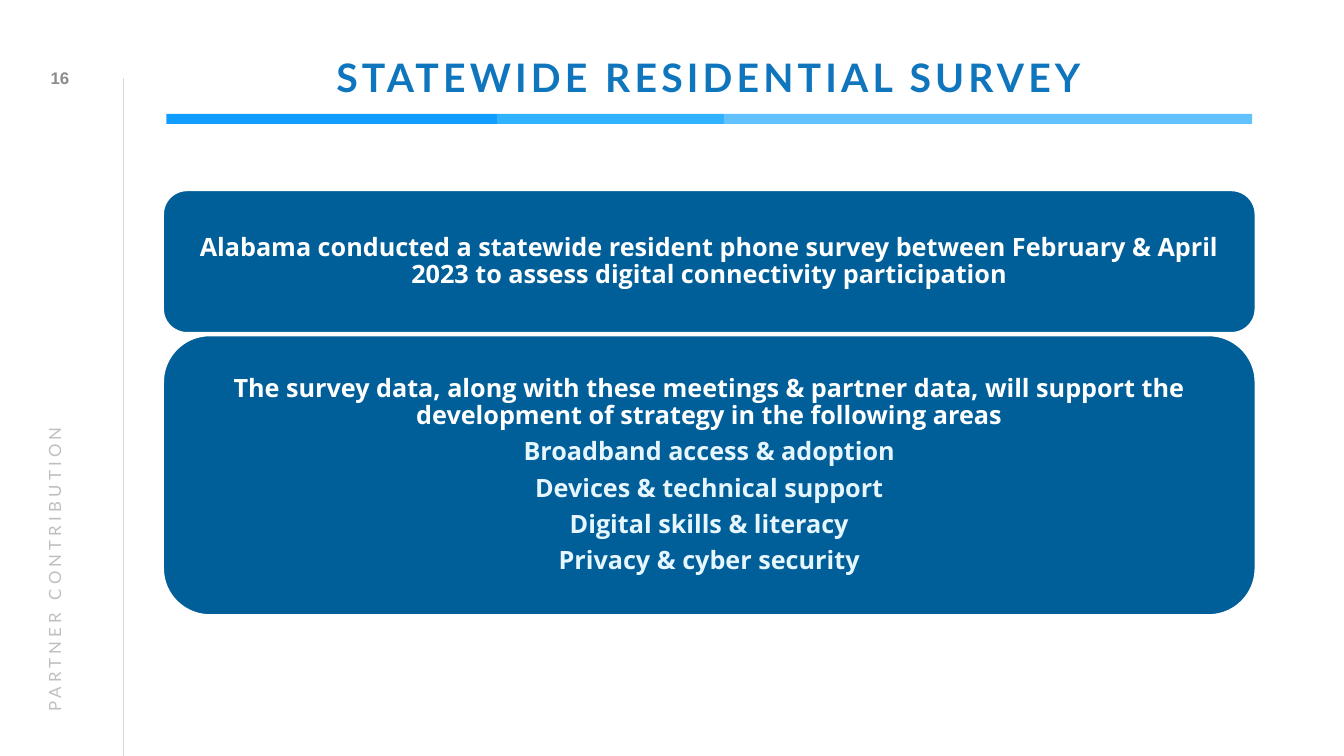
from pptx import Presentation, util as u
from pptx.dml.color import RGBColor
from pptx.enum import shapes, text
from pptx.oxml.ns import qn
from lxml import etree

PX = 9144  # 100 px to the inch

WHITE = RGBColor(0xFF, 0xFF, 0xFF)
NAVY = RGBColor(0x00, 0x5E, 0x98)
PALE_BLUE = RGBColor(0xE6, 0xF6, 0xFF)
TITLE_BLUE = RGBColor(0x0F, 0x75, 0xBC)
RULE_GRAY = RGBColor(0xD9, 0xD9, 0xD9)
NUMBER_GRAY = RGBColor(0x8C, 0x8C, 0x8C)
LABEL_GRAY = RGBColor(0xBF, 0xBF, 0xBF)
BAR_COLORS = (
    RGBColor(0x11, 0x9D, 0xFF),
    RGBColor(0x31, 0xB2, 0xFF),
    RGBColor(0x62, 0xC1, 0xFF),
)

SURVEY = ("Alabama conducted a statewide resident phone survey between "
          "February & April 2023 to assess digital connectivity participation")
STRATEGY = ("The survey data, along with these meetings & partner data, will "
            "support the development of strategy in the following areas")
AREAS = ("Broadband access & adoption", "Devices & technical support",
         "Digital skills & literacy", "Privacy & cyber security")


def px(*lengths):
    return [u.Emu(length * PX) for length in lengths]


def add_run(paragraph, words, font, size, color, bold=False, spacing=0):
    run = paragraph.add_run()
    run.text = words
    run.font.name = font
    run.font.size = u.Pt(size)
    run.font.bold = bold
    run.font.color.rgb = color
    if spacing:
        run.font._element.set("spc", str(spacing * 100))


def set_insets(frame, left, top, right, bottom):
    (frame.margin_left, frame.margin_top,
     frame.margin_right, frame.margin_bottom) = px(left, top, right, bottom)


def add_block(slide, kind, box, fill):
    shape = slide.shapes.add_shape(kind, *px(*box))
    shape.shadow.inherit = False
    shape.fill.solid()
    shape.fill.fore_color.rgb = fill
    shape.line.fill.background()
    return shape


def add_card(slide, box, lines):
    card = add_block(slide, shapes.MSO_SHAPE.ROUNDED_RECTANGLE, box, NAVY)
    card.line.color.rgb = WHITE
    card.line.width = u.Pt(1)
    frame = card.text_frame
    frame.word_wrap = True
    frame.vertical_anchor = text.MSO_ANCHOR.MIDDLE
    set_insets(frame, 7, 7, 7, 7)
    for index, (words, color) in enumerate(lines):
        paragraph = frame.add_paragraph() if index else frame.paragraphs[0]
        paragraph.alignment = text.PP_ALIGN.CENTER
        paragraph.line_spacing = 0.9
        paragraph.space_after = u.Pt(6.3)
        add_run(paragraph, words, "Open Sans", 18, color, bold=True)


def add_label(slide, box, words, font, color, bold=False, spacing=0):
    label = slide.shapes.add_textbox(*px(*box))
    label.text_frame.word_wrap = True
    add_run(label.text_frame.paragraphs[0], words, font, 12, color, bold, spacing)
    return label


def add_rule(slide, x1, y1, x2, y2):
    rule = slide.shapes.add_connector(
        shapes.MSO_CONNECTOR.STRAIGHT, *px(x1, y1, x2, y2))
    rule.line.color.rgb = RULE_GRAY
    rule.line.width = u.Pt(0.5)
    etree.SubElement(rule._element.spPr, qn("a:effectLst"))


def set_title(slide, box, words):
    title = slide.shapes.title
    title.left, title.top, title.width, title.height = px(*box)
    frame = title.text_frame
    frame.word_wrap = True
    frame.auto_size = text.MSO_AUTO_SIZE.NONE
    frame.vertical_anchor = text.MSO_ANCHOR.MIDDLE
    set_insets(frame, 0, 5, 0, 0)
    paragraph = frame.paragraphs[0]
    paragraph.alignment = text.PP_ALIGN.CENTER
    paragraph.line_spacing = 0.9
    add_run(paragraph, words, "Lato", 28, TITLE_BLUE, bold=True, spacing=3)


def main():
    presentation = Presentation()
    presentation.slide_width, presentation.slide_height = px(1333, 750)
    slide = presentation.slides.add_slide(presentation.slide_layouts[5])

    # Title and the three-part bar below it
    set_title(slide, (165, 40, 1076, 74), "STATEWIDE RESIDENTIAL SURVEY")
    left = 165
    for width, color in zip((328, 225, 524), BAR_COLORS):
        add_block(slide, shapes.MSO_SHAPE.RECTANGLE, (left, 113, width, 10), color)
        left += width

    # Side margin: rule, slide number, section name
    add_rule(slide, 122, 750, 122, 77)
    number = add_label(slide, (27, 57, 65, 40), "16", "Arial", NUMBER_GRAY, bold=True)
    number.text_frame.vertical_anchor = text.MSO_ANCHOR.MIDDLE
    number.text_frame.paragraphs[0].alignment = text.PP_ALIGN.CENTER
    number.text_frame.paragraphs[0].space_after = u.Pt(6)
    section = add_label(slide, (-242, 395, 602, 40), "PARTNER CONTRIBUTION",
                        "Lato", LABEL_GRAY, spacing=3)
    section.rotation = 270

    # Survey cards
    add_card(slide, (162, 189, 1083, 141), [(SURVEY, WHITE)])
    add_card(slide, (162, 333, 1083, 277),
             [(STRATEGY, WHITE)] + [(area, PALE_BLUE) for area in AREAS])

    presentation.save("out.pptx")


if __name__ == "__main__":
    main()
